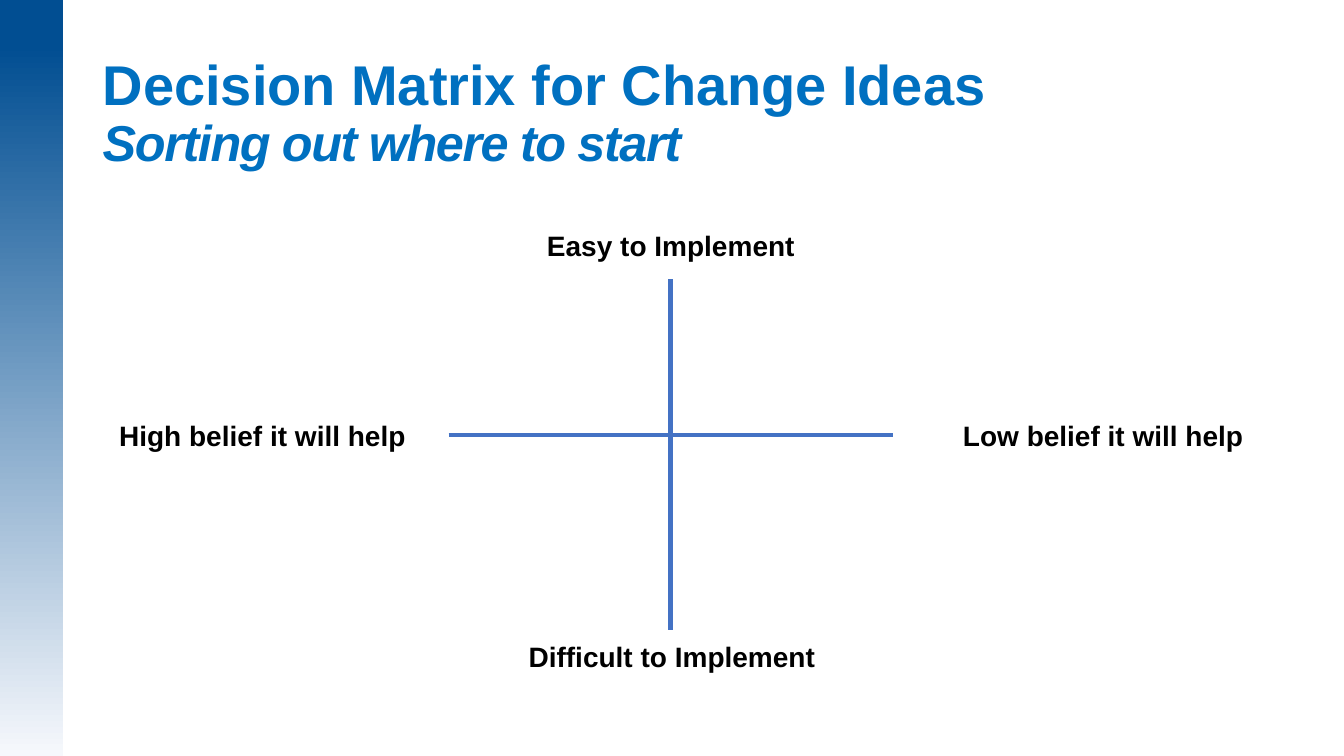
from dataclasses import dataclass

from lxml import etree
from pptx import Presentation
from pptx import util as u
from pptx.dml.color import RGBColor
from pptx.enum import shapes, text
from pptx.oxml import ns


@dataclass(frozen=True)
class Theme:
    font: str = "Arial"
    title: str = "0070C0"
    label: str = "000000"
    axis: str = "4472C4"
    band_top: str = "014E92"
    band_bottom: str = "F6F8FC"
    title_size: int = 40
    subtitle_size: int = 36
    label_size: int = 20
    axis_width: int = 3


class Slide:
    def __init__(self, page, theme):
        self.page = page
        self.theme = theme

    def style(self, font, size, color):
        font.name = self.theme.font
        font.size = u.Pt(size)
        font.bold = True
        font.color.rgb = RGBColor.from_string(color)

    def place(self, item, left, top, width, height):
        item.left, item.top = u.Pt(left), u.Pt(top)
        item.width, item.height = u.Pt(width), u.Pt(height)

    def title(self, heading, subtitle, *area):
        theme = self.theme
        box = self.page.shapes.title
        self.place(box, *area)
        frame = box.text_frame
        frame.word_wrap = True
        frame.auto_size = text.MSO_AUTO_SIZE.NONE
        frame.vertical_anchor = text.MSO_ANCHOR.TOP
        frame.margin_left = frame.margin_right = u.Pt(7.2)
        frame.margin_top, frame.margin_bottom = u.Pt(0), u.Pt(3.6)
        para = frame.paragraphs[0]
        para.alignment = text.PP_ALIGN.LEFT
        para.line_spacing = 0.9
        span = para.add_run()
        span.text = heading
        self.style(span.font, theme.title_size, theme.title)
        para.add_line_break()
        span = para.add_run()
        span.text = subtitle
        self.style(span.font, theme.subtitle_size, theme.title)
        span.font.italic = True
        span.font._element.set("spc", "-100")

    def band(self, *area):
        box = self.page.shapes.add_shape(shapes.MSO_SHAPE.RECTANGLE, *map(u.Pt, area))
        box.shadow.inherit = False
        box.line.fill.background()
        box.fill.gradient()
        box.fill.gradient_angle = 270
        stops = ((0.06, self.theme.band_top), (1, self.theme.band_bottom))
        for stop, (position, color) in zip(box.fill.gradient_stops, stops):
            stop.position = position
            stop.color.rgb = RGBColor.from_string(color)

    def label(self, words, *area):
        box = self.page.shapes.add_textbox(*map(u.Pt, area))
        frame = box.text_frame
        frame.word_wrap = True
        frame.auto_size = text.MSO_AUTO_SIZE.SHAPE_TO_FIT_TEXT
        para = frame.paragraphs[0]
        para.text = words
        para.alignment = text.PP_ALIGN.CENTER
        self.style(para.font, self.theme.label_size, self.theme.label)

    def axis(self, *ends):
        line = self.page.shapes.add_connector(
            shapes.MSO_CONNECTOR.STRAIGHT, *map(u.Pt, ends))
        line.line.color.rgb = RGBColor.from_string(self.theme.axis)
        line.line.width = u.Pt(self.theme.axis_width)
        etree.SubElement(line._element.spPr, ns.qn("a:effectLst"))


def main():
    deck = Presentation()
    deck.slide_width, deck.slide_height = u.Pt(960), u.Pt(540)
    page = deck.slides.add_slide(deck.slide_layouts[5])
    slide = Slide(page, Theme())
    slide.title("Decision Matrix for Change Ideas", "Sorting out where to start",
                66.2, 41, 923, 110)
    slide.band(0, 0, 45, 540)
    label_height = 31.5
    for words, left, top, width in (
        ("Difficult to Implement", 291, 453, 378),
        ("Easy to Implement", 343.5, 160, 271.5),
        ("High belief it will help", 61, 295.5, 253),
        ("Low belief it will help", 668, 295.5, 240),
    ):
        slide.label(words, left, top, width, label_height)
    center_x, center_y = 479, 310.5
    slide.axis(center_x, 199.5, center_x, 450)
    slide.axis(320.5, center_y, 638, center_y)
    deck.save("out.pptx")


if __name__ == "__main__":
    main()
